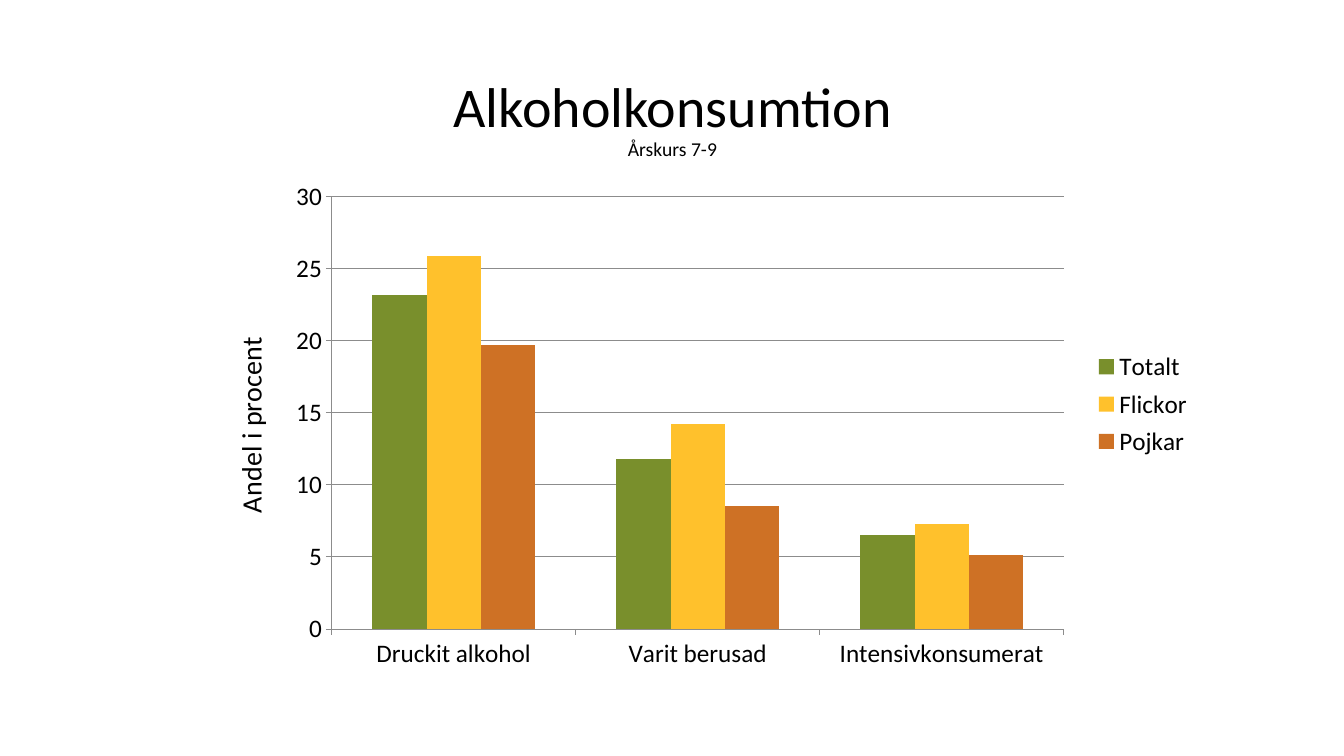
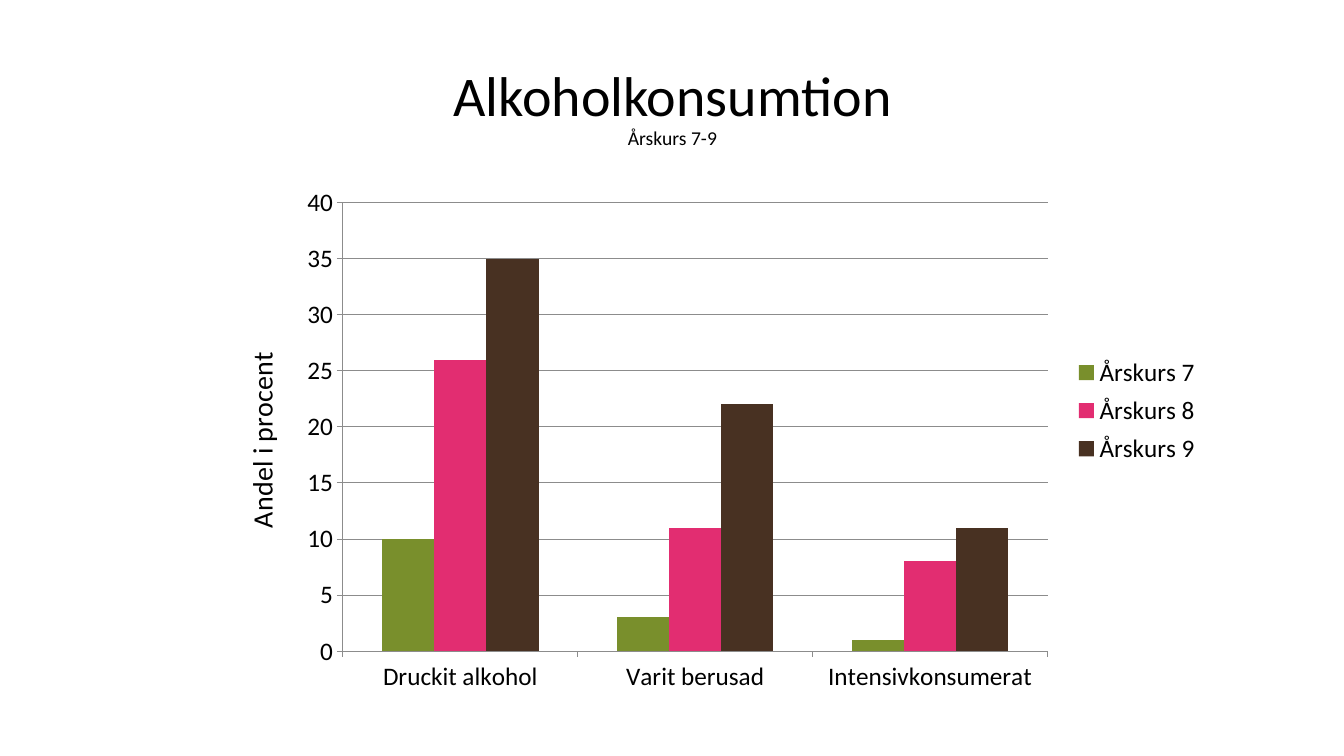
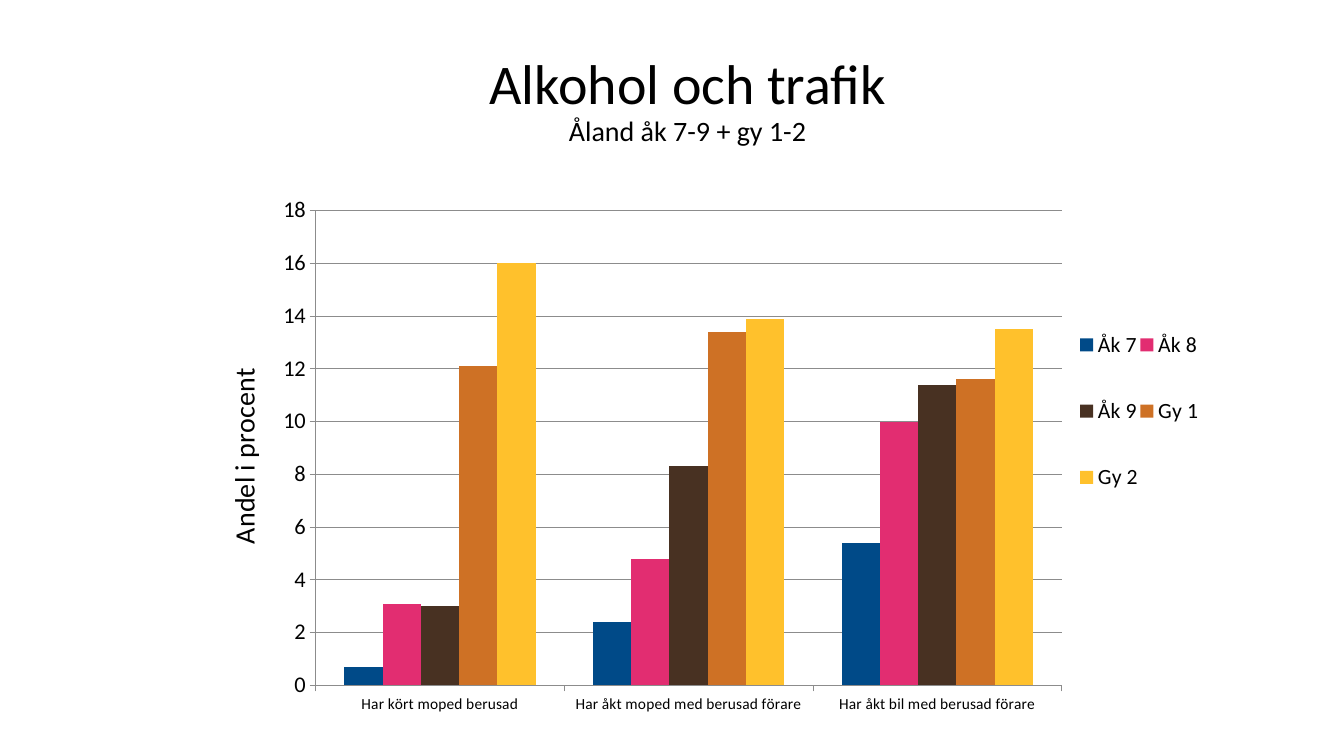
from lxml import etree
from pptx import Presentation
from pptx.chart.data import CategoryChartData
from pptx.dml.color import RGBColor
from pptx.enum import chart as ch, text as tx
from pptx.oxml.ns import qn
from pptx.util import Inches, Pt


class Theme:
    font = "Calibri"
    chart_font = "Roboto"
    ink = "000000"
    rule = "8C8C8C"
    green, yellow, orange = "798F2C", "FFC12C", "CE7125"
    pink, brown, blue = "E22D71", "483122", "004A88"
    heading, axis_title, body = 40, 20, 18
    rule_width = 0.5


LEFT = 2.17
VALUE_TITLE = "Andel i procent"
HABITS = ["Druckit alkohol", "Varit berusad", "Intensivkonsumerat"]

SLIDES = [
    dict(
        heading="Alkoholkonsumtion", group="Årskurs 7-9", group_size=14,
        heading_box=(LEFT, 0.56, 9, 1.04), chart_box=(LEFT, 1.75, 9.74, 5.09),
        sizes=(18, 18, 18), top=30, step=5, cats=HABITS,
        plot=(3.29, 1.95, 7.26, 4.29),
        legend=(10.8, 3.42, 1.07, 1.18), value_title=(2.24, 3.29),
        series=[
            ("Totalt", Theme.green, (23.2, 11.8, 6.5)),
            ("Flickor", Theme.yellow, (25.9, 14.2, 7.3)),
            ("Pojkar", Theme.orange, (19.7, 8.5, 5.1)),
        ],
    ),
    dict(
        heading="Alkoholkonsumtion", group="Årskurs 7-9", group_size=14,
        heading_box=(LEFT, 0.53, 9, 0.96), chart_box=(LEFT, 1.75, 9.82, 5.21),
        sizes=(18, 18, 18), top=40, step=5, cats=HABITS,
        plot=(3.4, 2.01, 6.99, 4.45),
        legend=(10.63, 3.47, 1.29, 1.21), value_title=(2.35, 3.44),
        series=[
            ("Årskurs 7", Theme.green, (10, 3, 1)),
            ("Årskurs 8", Theme.pink, (26, 11, 8)),
            ("Årskurs 9", Theme.brown, (35, 22, 11)),
        ],
    ),
    dict(
        heading="Alkohol och trafik", group="Åland åk 7-9 + gy 1-2", group_size=20,
        heading_box=(LEFT, 0.29, 9.3, 1.17), chart_box=(LEFT, 1.46, 10.07, 6.04),
        sizes=(11, 16, 15.5), top=18, step=2,
        cats=["Har kört moped berusad", "Har åkt moped med berusad förare",
              "Har åkt bil med berusad förare"],
        plot=(3.13, 2.09, 7.4, 4.71),
        legend=(10.69, 2.9, 1.22, 2.36), value_title=(2.17, 3.6),
        series=[
            ("Åk 7", Theme.blue, (0.7, 2.4, 5.4)),
            ("Åk 8", Theme.pink, (3.1, 4.8, 10)),
            ("Åk 9", Theme.brown, (3, 8.3, 11.4)),
            ("Gy 1", Theme.orange, (12.1, 13.4, 11.6)),
            ("Gy 2", Theme.yellow, (16, 13.9, 13.5)),
        ],
    ),
]


def set_font(font, size, name=Theme.font):
    font.name, font.size, font.bold = name, Pt(size), False
    font.color.rgb = RGBColor.from_string(Theme.ink)


def set_rule(line):
    line.color.rgb = RGBColor.from_string(Theme.rule)
    line.width = Pt(Theme.rule_width)


def set_layout(parent, box, chart_box, after=None, inner=False):
    left, top, width, height = chart_box
    offsets = (left, top, 0, 0)
    extents = (width, height, width, height)
    for old in parent.findall(qn("c:layout")):
        parent.remove(old)
    layout = etree.Element(qn("c:layout"))
    manual = etree.SubElement(layout, qn("c:manualLayout"))
    settings = [("layoutTarget", "inner")] if inner else []
    settings += [("xMode", "edge"), ("yMode", "edge")]
    settings += [(tag, (length - offset) / extent)
                 for tag, length, offset, extent in zip("xywh", box, offsets, extents)]
    for tag, value in settings:
        etree.SubElement(manual, qn("c:" + tag)).set("val", str(value))
    position = parent.index(parent.find(qn(after))) + 1 if after else 0
    parent.insert(position, layout)


def add_heading(slide, content):
    heading = slide.shapes.title
    heading.left, heading.top, heading.width, heading.height = map(Inches, content["heading_box"])
    frame = heading.text_frame
    frame.auto_size = tx.MSO_AUTO_SIZE.NONE
    frame.word_wrap = True
    frame.vertical_anchor = tx.MSO_ANCHOR.BOTTOM
    frame.margin_left = frame.margin_top = frame.margin_right = frame.margin_bottom = 0
    paragraph = frame.paragraphs[0]
    paragraph.alignment = tx.PP_ALIGN.CENTER
    paragraph.line_spacing = 0.9
    lines = [(content["heading"], Theme.heading), (content["group"], content["group_size"])]
    for number, (words, size) in enumerate(lines):
        if number:
            paragraph.add_line_break()
        run = paragraph.add_run()
        run.text = words
        set_font(run.font, size)


def add_columns(slide, content):
    box = content["chart_box"]
    data = CategoryChartData()
    data.categories = content["cats"]
    for name, _, values in content["series"]:
        data.add_series(name, values)
    chart = slide.shapes.add_chart(
        ch.XL_CHART_TYPE.COLUMN_CLUSTERED, *map(Inches, box), data).chart
    chart.has_title = False
    set_font(chart.font, Theme.body, Theme.chart_font)

    columns = chart.plots[0]
    columns.vary_by_categories = False
    columns.gap_width, columns.overlap = 150, 0
    for series, (_, color, _) in zip(columns.series, content["series"]):
        series.format.fill.solid()
        series.format.fill.fore_color.rgb = RGBColor.from_string(color)

    category_size, value_size, legend_size = content["sizes"]
    values = chart.value_axis
    for axis, size in ((chart.category_axis, category_size), (values, value_size)):
        axis.major_tick_mark = ch.XL_TICK_MARK.OUTSIDE
        axis.minor_tick_mark = ch.XL_TICK_MARK.NONE
        set_font(axis.tick_labels.font, size)
        set_rule(axis.format.line)
    values.minimum_scale, values.maximum_scale = 0, content["top"]
    values.major_unit = content["step"]
    values.has_major_gridlines = True
    set_rule(values.major_gridlines.format.line)

    frame = values.axis_title.text_frame
    run = frame.paragraphs[0].add_run()
    run.text = VALUE_TITLE
    set_font(run.font, Theme.axis_title)
    frame._txBody.bodyPr.set("rot", "-5400000")
    frame._txBody.bodyPr.set("vert", "horz")
    set_layout(values.axis_title._element, content["value_title"], box, "c:tx")

    chart.has_legend = True
    legend = chart.legend
    legend.position = ch.XL_LEGEND_POSITION.RIGHT
    legend.include_in_layout = False
    set_font(legend.font, legend_size)
    set_layout(legend._element, content["legend"], box, "c:legendPos")
    set_layout(chart._chartSpace.chart.plotArea, content["plot"], box, inner=True)


def main():
    deck = Presentation()
    deck.slide_width, deck.slide_height = Inches(13.33), Inches(7.5)
    for content in SLIDES:
        slide = deck.slides.add_slide(deck.slide_layouts[5])
        add_heading(slide, content)
        add_columns(slide, content)
    deck.save("out.pptx")


if __name__ == "__main__":
    main()
